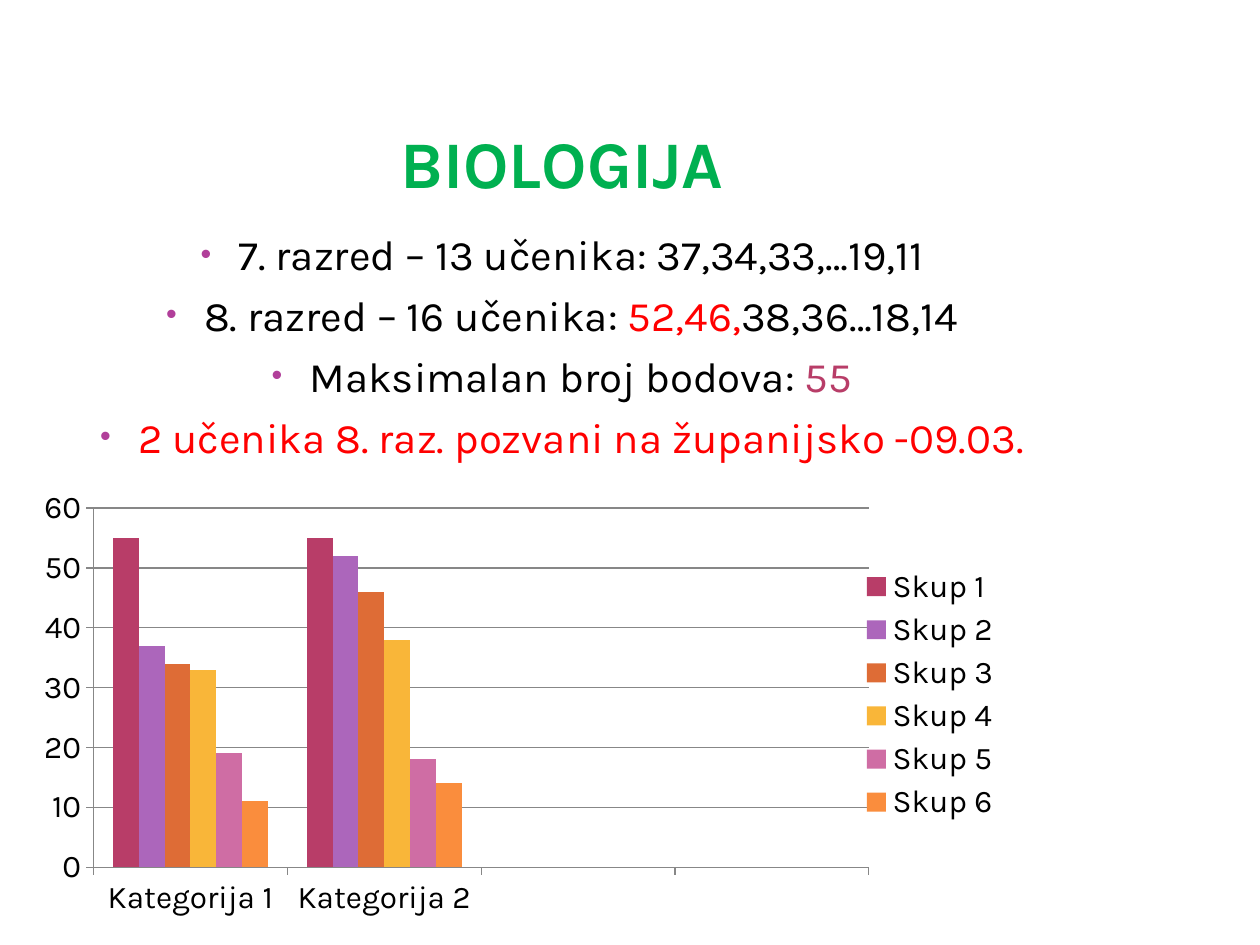
from lxml.etree import SubElement
from pptx import Presentation
from pptx.chart.data import CategoryChartData
from pptx.dml.color import RGBColor
from pptx.enum.chart import XL_CHART_TYPE, XL_LEGEND_POSITION, XL_TICK_MARK
from pptx.enum.text import MSO_ANCHOR, MSO_AUTO_SIZE, PP_ALIGN
from pptx.oxml import parse_xml
from pptx.oxml.ns import nsdecls, qn
from pptx.util import Emu, Pt

SCALE = 914400 / 126
FONT = "Karla"
BLACK = RGBColor(0, 0, 0)
GREEN = RGBColor(0x00, 0xB0, 0x50)
RED = RGBColor(0xFF, 0, 0)
ROSE = RGBColor(0xB8, 0x3D, 0x68)
GRAY = RGBColor(0x87, 0x87, 0x87)
BULLET = "B13F9A"
LINES = [
    [("7. razred – 13 učenika: 37,34,33,…19,11", BLACK)],
    [("8. razred – 16 učenika: ", BLACK), ("52,46,", RED), ("38,36…18,14", BLACK)],
    [("Maksimalan broj bodova: ", BLACK), ("55", ROSE)],
    [("2 učenika 8. raz. pozvani na županijsko -09.03.", RED)],
]
SERIES = [
    ((55, 55), ROSE),
    ((37, 52), RGBColor(0xAC, 0x66, 0xBB)),
    ((34, 46), RGBColor(0xDE, 0x6C, 0x36)),
    ((33, 38), RGBColor(0xF9, 0xB6, 0x39)),
    ((19, 18), RGBColor(0xCF, 0x6D, 0xA4)),
    ((11, 14), RGBColor(0xFA, 0x8D, 0x3D)),
]
PLOT = {"x": 0.074, "y": 0.128, "w": 0.78, "h": 0.717}


def px(n):
    """Turn px into EMU."""
    return Emu(round(n * SCALE))


def place(shape, box):
    """Move a shape into a box of left, top, width and height."""
    shape.left, shape.top, shape.width, shape.height = map(px, box)


def style(font, size, color, bold=False):
    """Set the face, size, colour and weight of a font."""
    font.name, font.size, font.bold = FONT, Pt(size), bold
    font.color.rgb = color


def add_title(slide, box):
    """Fill the title placeholder."""
    title = slide.shapes.title
    place(title, box)
    frame = title.text_frame
    frame.text = "BIOLOGIJA"
    frame.auto_size = MSO_AUTO_SIZE.NONE
    frame.vertical_anchor = MSO_ANCHOR.BOTTOM
    frame.margin_left = frame.margin_right = px(6)
    frame.margin_top = frame.margin_bottom = 0
    line = frame.paragraphs[0]
    line.alignment = PP_ALIGN.CENTER
    style(line.runs[0].font, 38, GREEN, True)


def add_bullet(line):
    """Give a paragraph its hanging round bullet."""
    props = line._p.get_or_add_pPr()
    props.set("marL", str(px(38)))
    props.set("indent", str(px(-38)))
    color = SubElement(props, qn("a:buClr"))
    SubElement(color, qn("a:srgbClr"), val=BULLET)
    SubElement(props, qn("a:buSzPct"), val="73000")
    SubElement(props, qn("a:buFont"), typeface="Arial")
    SubElement(props, qn("a:buChar"), char="•")


def add_list(slide, box):
    """Fill the body placeholder with the results."""
    body = slide.placeholders[1]
    place(body, box)
    frame = body.text_frame
    frame.auto_size = MSO_AUTO_SIZE.NONE
    for i, parts in enumerate(LINES):
        line = frame.add_paragraph() if i else frame.paragraphs[0]
        add_bullet(line)
        line.alignment = PP_ALIGN.CENTER
        line.space_before = Pt(6 if i else 0)
        for text, color in parts:
            run = line.add_run()
            run.text = text
            style(run.font, 24, color)


def set_plot(chart):
    """Fix the inner plot area as shares of the chart."""
    modes = '<c:layoutTarget val="inner"/><c:xMode val="edge"/><c:yMode val="edge"/>'
    sizes = "".join(f'<c:{key} val="{val}"/>' for key, val in PLOT.items())
    area = chart._chartSpace.chart.plotArea
    for old in area.findall(qn("c:layout")):
        area.remove(old)
    area.insert(0, parse_xml(
        f'<c:layout {nsdecls("c")}><c:manualLayout>{modes}{sizes}'
        "</c:manualLayout></c:layout>"))


def add_bars(slide, box):
    """Add the column chart of points per category."""
    data = CategoryChartData()
    data.categories = ["Kategorija 1", "Kategorija 2", "", ""]
    for i, (vals, _) in enumerate(SERIES, 1):
        data.add_series(f"Skup {i}", vals + (None, None))
    chart = slide.shapes.add_chart(
        XL_CHART_TYPE.COLUMN_CLUSTERED, *map(px, box), data).chart
    style(chart.font, 18, BLACK)
    chart.has_title = False
    chart.has_legend = True
    chart.legend.position = XL_LEGEND_POSITION.RIGHT
    chart.legend.include_in_layout = False
    plot = chart.plots[0]
    plot.gap_width, plot.overlap, plot.vary_by_categories = 150, 0, False
    for item, (_, color) in zip(plot.series, SERIES):
        item.format.fill.solid()
        item.format.fill.fore_color.rgb = color
    for axis in (chart.category_axis, chart.value_axis):
        axis.major_tick_mark = XL_TICK_MARK.OUTSIDE
        axis.format.line.color.rgb = GRAY
    scale = chart.value_axis
    scale.minimum_scale, scale.maximum_scale, scale.major_unit = 0, 60, 10
    scale.has_major_gridlines = True
    scale.major_gridlines.format.line.color.rgb = GRAY
    set_plot(chart)


def main():
    """Build and save the slide."""
    deck = Presentation()
    deck.slide_width, deck.slide_height = px(1260), px(945)
    slide = deck.slides.add_slide(deck.slide_layouts[1])
    add_title(slide, (63, 44, 998, 158))
    add_list(slide, (63, 222, 998, 668))
    add_bars(slide, (20, 444, 994, 501))
    deck.save("out.pptx")


if __name__ == "__main__":
    main()
